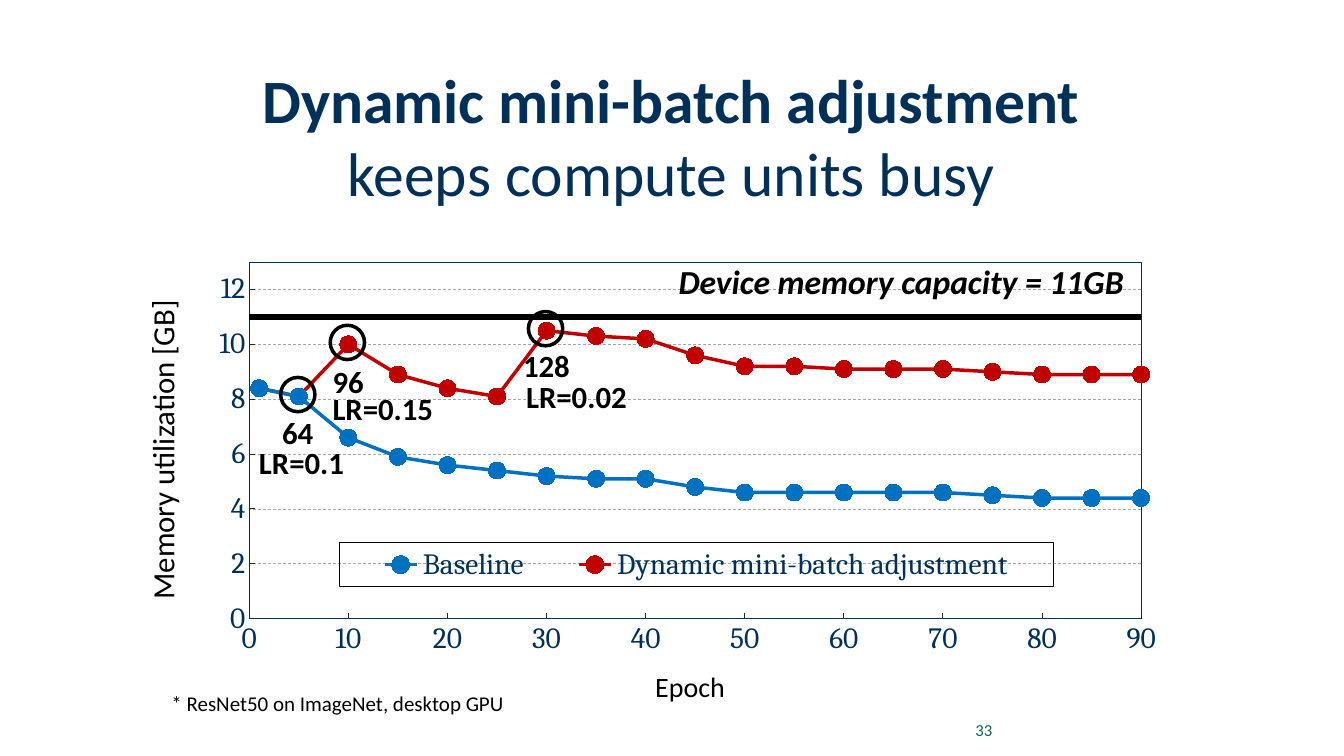
from lxml import etree
from pptx import Presentation
from pptx.chart.data import XyChartData
from pptx.dml.color import RGBColor
from pptx.enum.chart import XL_CHART_TYPE, XL_LEGEND_POSITION, XL_MARKER_STYLE, XL_TICK_MARK
from pptx.enum.dml import MSO_LINE
from pptx.enum.shapes import MSO_CONNECTOR, MSO_SHAPE
from pptx.enum.text import MSO_ANCHOR, PP_ALIGN
from pptx.oxml import parse_xml
from pptx.oxml.ns import nsdecls, qn
from pptx.util import Inches, Pt

SCATTER = XL_CHART_TYPE.XY_SCATTER_LINES
CIRCLE = XL_MARKER_STYLE.CIRCLE
TICK_IN, TICK_NONE = XL_TICK_MARK.INSIDE, XL_TICK_MARK.NONE
LEGEND_RIGHT = XL_LEGEND_POSITION.RIGHT
DASH = MSO_LINE.DASH
STRAIGHT, OVAL = MSO_CONNECTOR.STRAIGHT, MSO_SHAPE.OVAL
TOP, MIDDLE = MSO_ANCHOR.TOP, MSO_ANCHOR.MIDDLE
LEFT, CENTER, RIGHT = PP_ALIGN.LEFT, PP_ALIGN.CENTER, PP_ALIGN.RIGHT

NAVY = RGBColor(0x00, 0x30, 0x57)
BLUE = RGBColor(0x00, 0x70, 0xC0)
RED = RGBColor(0xC0, 0x00, 0x00)
TEAL = RGBColor(0x11, 0x5E, 0x67)
GRAY = RGBColor(0xA6, 0xA6, 0xA6)
BLACK = RGBColor(0, 0, 0)

TITLE = ("Dynamic mini-batch adjustment", "keeps compute units busy")
FOOTNOTE = "* ResNet50 on ImageNet, desktop GPU"
EPOCHS = [1] + list(range(5, 91, 5))
SERIES = [
    ("Baseline", BLUE, [8.4, 8.1, 6.6, 5.9, 5.6, 5.4, 5.2, 5.1, 5.1, 4.8,
                        4.6, 4.6, 4.6, 4.6, 4.6, 4.5, 4.4, 4.4, 4.4]),
    ("Dynamic mini-batch adjustment", RED,
     [8.4, 8.1, 10, 8.9, 8.4, 8.1, 10.5, 10.3, 10.2, 9.6,
      9.2, 9.2, 9.1, 9.1, 9.1, 9, 8.9, 8.9, 8.9]),
]
CAPACITY = 11
CIRCLED = [(5, 8.1), (10, 10), (30, 10.5)]
STEPS = [
    ("64", 2.70, 4.06, 0.59), ("LR=0.1", 2.47, 4.35, 1.15),
    ("96", 3.20, 3.55, 0.59), ("LR=0.15", 3.20, 3.82, 1.27),
    ("128", 5.09, 3.39, 0.74), ("LR=0.02", 5.12, 3.70, 1.27),
]

CHART = (1.65, 2.36, 10.03, 4.37)
PLOT = (0.082, 0.055, 0.882, 0.81)
LEGEND = (0.171, 0.692, 0.706, 0.1)
X_MAX, Y_MAX = 90, 13
RING = 0.34


def plot_point(epoch, memory):
    left, top, width, height = CHART
    return (left + width * (PLOT[0] + PLOT[2] * epoch / X_MAX),
            top + height * (PLOT[1] + PLOT[3] * (1 - memory / Y_MAX)))


def manual_layout(area, inner=False):
    target = '<c:layoutTarget val="inner"/>' if inner else ""
    modes = '<c:xMode val="edge"/><c:yMode val="edge"/>'
    sizes = "".join(f'<c:{key} val="{share}"/>' for key, share in zip("xywh", area))
    return parse_xml(f'<c:layout {nsdecls("c")}><c:manualLayout>{target}{modes}{sizes}'
                     '</c:manualLayout></c:layout>')


def outline(color, points):
    return parse_xml(f'<c:spPr {nsdecls("c", "a")}><a:noFill/><a:ln w="{Pt(points)}"><a:solidFill>'
                     f'<a:srgbClr val="{color}"/></a:solidFill></a:ln></c:spPr>')


def set_line(line, color, points):
    line.color.rgb = color
    line.width = Pt(points)


def set_font(font, size, color, name="Calibri", bold=False, italic=False):
    font.size, font.name, font.bold, font.italic = Pt(size), name, bold, italic
    font.color.rgb = color


def add_label(page, words, area, size, color=BLACK, bold=False, italic=False,
              align=LEFT, anchor=TOP, inset=(0.1, 0.05), margin=0, spacing=None):
    box = page.shapes.add_textbox(*map(Inches, area))
    frame = box.text_frame
    frame.word_wrap, frame.vertical_anchor = True, anchor
    frame.margin_left = frame.margin_right = Inches(inset[0])
    frame.margin_top = frame.margin_bottom = Inches(inset[1])
    para = frame.paragraphs[0]
    para.text, para.alignment, para.line_spacing = words, align, spacing
    if margin:
        para._p.get_or_add_pPr().set("marL", str(Inches(margin)))
    set_font(para.font, size, color, bold=bold, italic=italic)
    return box


def add_title(page):
    title = page.shapes.title
    title.left, title.top, title.width, title.height = map(Inches, (1.12, 0.51, 11.08, 1.09))
    frame = title.text_frame
    frame.vertical_anchor, frame.word_wrap = TOP, True
    frame.margin_left = frame.margin_right = frame.margin_top = frame.margin_bottom = Inches(0.1)
    para = frame.paragraphs[0]
    para.alignment = CENTER
    for index, words in enumerate(TITLE):
        if index:
            para.add_line_break()
        span = para.add_run()
        span.text = words
        set_font(span.font, 44, NAVY, bold=index == 0)


def add_memory_chart(page):
    data = XyChartData()
    for name, _, values in SERIES:
        series = data.add_series(name)
        for epoch, memory in zip(EPOCHS, values):
            series.add_data_point(epoch, memory)
    chart = page.shapes.add_chart(SCATTER, *map(Inches, CHART), data).chart
    chart.has_title = False
    set_font(chart.font, 21, NAVY, "Cambria")

    for series, (_, color, _) in zip(chart.plots[0].series, SERIES):
        series.smooth = False
        set_line(series.format.line, color, 2.5)
        series.marker.style, series.marker.size = CIRCLE, 12
        series.marker.format.fill.solid()
        series.marker.format.fill.fore_color.rgb = color
        series.marker.format.line.color.rgb = color
    chart.plots[0].vary_by_categories = False

    axes = ((chart.category_axis, X_MAX, 10, "General"), (chart.value_axis, Y_MAX, 2, "#,##0"))
    for axis, maximum, step, number_format in axes:
        axis.minimum_scale, axis.maximum_scale, axis.major_unit = 0, maximum, step
        axis.major_tick_mark, axis.minor_tick_mark = TICK_IN, TICK_NONE
        axis.has_major_gridlines = axis is chart.value_axis
        axis.tick_labels.number_format = number_format
        axis.tick_labels.number_format_is_linked = False
        set_font(axis.tick_labels.font, 21, NAVY, "Cambria")
        set_line(axis.format.line, NAVY, 0.75)
    grid = chart.value_axis.major_gridlines.format.line
    set_line(grid, GRAY, 0.5)
    grid.dash_style = DASH

    chart.has_legend = True
    legend = chart.legend
    legend.position, legend.include_in_layout = LEGEND_RIGHT, True
    set_font(legend.font, 21, NAVY, "Cambria")
    for old in legend._element.findall(qn("c:layout")):
        legend._element.remove(old)
    legend._element.find(qn("c:legendPos")).addnext(manual_layout(LEGEND))
    legend._element.find(qn("c:overlay")).addnext(outline(BLACK, 0.75))

    area = chart._chartSpace.chart.plotArea
    for old in area.findall(qn("c:layout")):
        area.remove(old)
    area.insert(0, manual_layout(PLOT, inner=True))
    area.append(outline(NAVY, 0.75))


def add_capacity_line(page):
    ends = plot_point(0, CAPACITY) + plot_point(X_MAX, CAPACITY)
    line = page.shapes.add_connector(STRAIGHT, *map(Inches, ends))
    set_line(line.line, BLACK, 3.75)
    etree.SubElement(line._element.spPr, qn("a:effectLst"))


def add_ring(page, epoch, memory):
    x, y = plot_point(epoch, memory)
    area = (x - RING / 2 - 0.01, y - RING / 2 - 0.02, RING, RING)
    ring = page.shapes.add_shape(OVAL, *map(Inches, area))
    ring.shadow.inherit = False
    ring.fill.background()
    set_line(ring.line, BLACK, 2.5)


def main():
    deck = Presentation()
    deck.slide_width, deck.slide_height = Inches(13.33), Inches(7.5)
    page = deck.slides.add_slide(deck.slide_layouts[5])
    add_title(page)
    add_memory_chart(page)
    add_label(page, "33", (9.02, 7.06, 0.92, 0.37), 12, TEAL, align=RIGHT, anchor=MIDDLE)
    add_label(page, "Memory utilization [GB]", (-0.16, 4.04, 3.54, 0.47), 22).rotation = 270
    add_label(page, "Epoch", (6.4, 6.59, 1.07, 0.44), 20)
    note = {"inset": (0.07, 0.07), "margin": 0.11, "spacing": 0.9}
    add_label(page, FOOTNOTE, (1.52, 6.81, 4.44, 0.49), 15, **note)
    add_capacity_line(page)
    add_label(page, f"Device memory capacity = {CAPACITY}GB", (6.55, 2.56, 5.4, 0.49), 24,
              bold=True, italic=True, **note)
    for epoch, memory in CIRCLED:
        add_ring(page, epoch, memory)
    for words, left, top, width in STEPS:
        add_label(page, words, (left, top, width, 0.47), 22, bold=True)
    deck.save("out.pptx")


if __name__ == "__main__":
    main()
